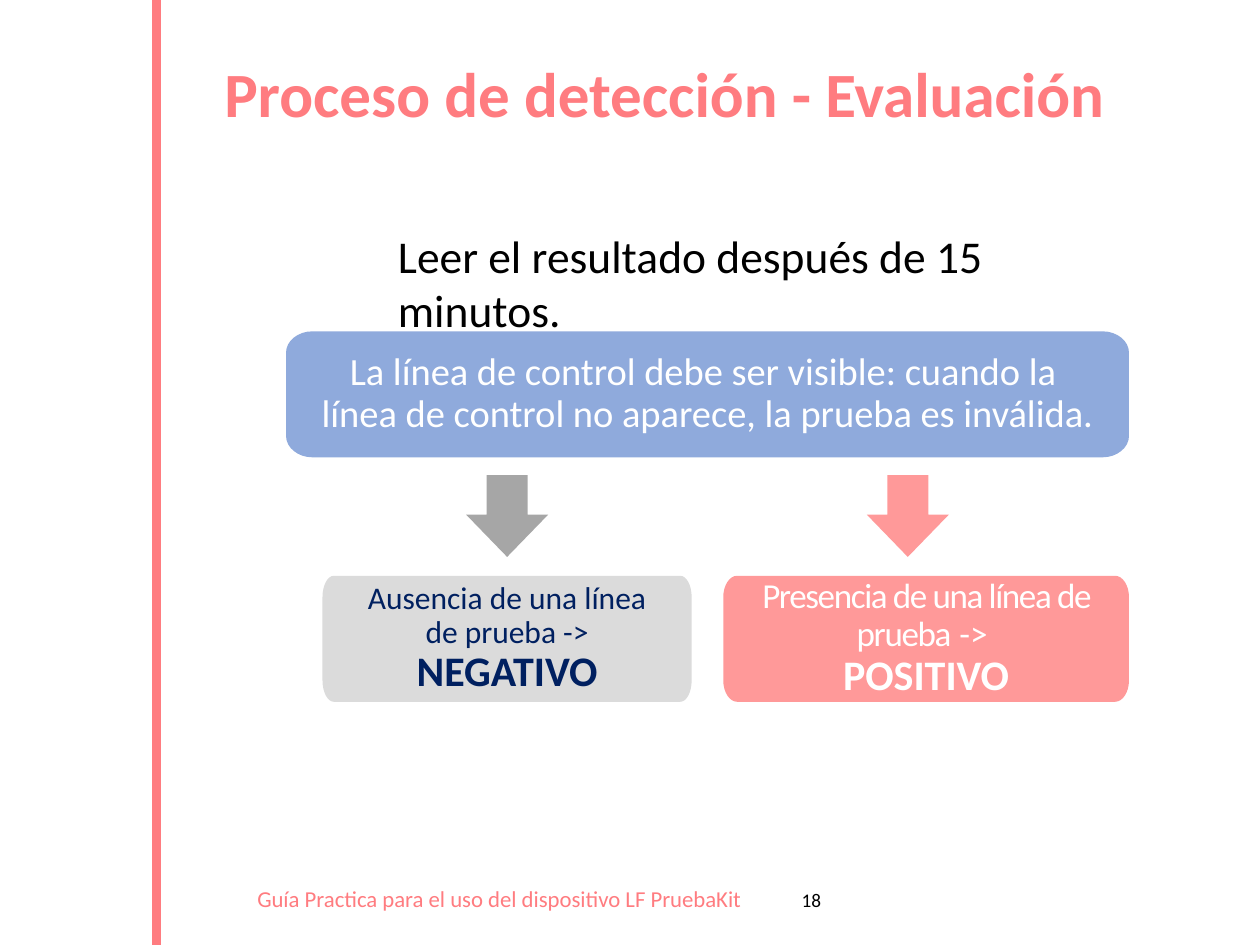
from lxml.etree import SubElement
from pptx import Presentation
from pptx.dml.color import RGBColor
from pptx.enum.shapes import MSO_CONNECTOR, MSO_SHAPE
from pptx.enum.text import MSO_ANCHOR, MSO_AUTO_SIZE, PP_ALIGN
from pptx.oxml.ns import qn
from pptx.util import Inches, Pt

CORAL, PINK, WHITE, NAVY = "FF7C80", "FF9999", "FFFFFF", "002060"
BREAK = "\n"
ROW_BOX, ROW_ARROW, ROW_RESULT = 2.63, 3.77, 4.57
BOX_H, CORNER_H = 1, 0.17
ROUNDNESS = 0.55


def rgb(value):
    return RGBColor.from_string(value)


def style(run, size, color, bold=False, spacing=0):
    """Format a run; spacing is in points."""
    run.font.name = "Calibri"
    run.font.size = Pt(size)
    run.font.bold = bold
    run.font.color.rgb = rgb(color)
    if spacing:
        run.font._element.set("spc", str(round(spacing * 100)))


def paint(s, color):
    s.shadow.inherit = False
    s.fill.solid()
    s.fill.fore_color.rgb = rgb(color)
    s.line.fill.background()


def add_rule(slide, x, height):
    """Draw the full-height vertical rule."""
    line = slide.shapes.add_connector(
        MSO_CONNECTOR.STRAIGHT, Inches(x), height, Inches(x), 0)
    line.line.color.rgb = rgb(CORAL)
    line.line.width = Pt(5)
    SubElement(line._element.spPr, qn("a:effectLst"))


def add_title(slide, text):
    s = slide.shapes.title
    s.left, s.top, s.width, s.height = map(Inches, (1.68, 0.45, 7.63, 0.93))
    tf = s.text_frame
    tf.text = text
    tf.auto_size = MSO_AUTO_SIZE.NONE
    tf.vertical_anchor = MSO_ANCHOR.TOP
    p = tf.paragraphs[0]
    p.alignment = PP_ALIGN.LEFT
    p.line_spacing = 0.9
    style(p.runs[0], 36, CORAL, bold=True)


def add_label(slide, place, text, size, color, align=PP_ALIGN.CENTER):
    tf = slide.shapes.add_textbox(*map(Inches, place)).text_frame
    tf.word_wrap = True
    tf.text = text
    p = tf.paragraphs[0]
    p.alignment = align
    style(p.runs[0], size, color)


def round_corners(s):
    """Turn every second segment of an eight-point outline into a curve."""
    segments = list(s._element.iter(qn("a:lnTo")))
    points = [tuple(int(pt.get(axis)) for axis in "xy")
              for pt in s._element.iter(qn("a:pt"))]
    for i in range(0, 8, 2):
        start, end = points[i], points[i + 1]
        corner = (start[0], end[1]) if i % 4 == 0 else (end[0], start[1])
        curve = segments[i]
        curve.tag = qn("a:cubicBezTo")
        for position, anchor in enumerate((start, end)):
            x, y = (round(a + ROUNDNESS * (c - a)) for a, c in zip(anchor, corner))
            control = SubElement(curve, qn("a:pt"), x=str(x), y=str(y))
            curve.insert(position, control)


def add_rounded_box(slide, left, top, width, corner_w, fill, parts):
    """Draw a box with elliptical corners; parts are breaks or (text, *style)."""
    right, bottom = left + width, top + BOX_H
    x1, x2 = left + corner_w, right - corner_w
    y1, y2 = top + CORNER_H, bottom - CORNER_H
    outline = [(Inches(x), Inches(y)) for x, y in (
        (left, y1), (x1, top), (x2, top), (right, y1),
        (right, y2), (x2, bottom), (x1, bottom), (left, y2))]
    builder = slide.shapes.build_freeform(*outline[0])
    builder.add_line_segments(outline[1:], close=True)
    s = builder.convert_to_shape()
    round_corners(s)
    paint(s, fill)

    tf = s.text_frame
    tf.word_wrap = True
    tf.vertical_anchor = MSO_ANCHOR.MIDDLE
    tf.margin_left = tf.margin_right = Inches(0.21)
    tf.margin_top = tf.margin_bottom = Inches(0.05)
    p = tf.paragraphs[0]
    p.alignment = PP_ALIGN.CENTER
    p.line_spacing = 0.9
    for part in parts:
        if part == BREAK:
            p.add_line_break()
        else:
            text, *look = part
            r = p.add_run()
            r.text = text
            style(r, *look)


def add_down_arrow(slide, left, color):
    s = slide.shapes.add_shape(MSO_SHAPE.DOWN_ARROW, Inches(left), Inches(ROW_ARROW),
                               Inches(0.65), Inches(0.65))
    s.adjustments[0] = 0.5
    s.adjustments[1] = 0.515
    paint(s, color)


def main():
    prs = Presentation()
    prs.slide_width, prs.slide_height = Inches(10), Inches(7.5)
    slide = prs.slides.add_slide(prs.slide_layouts[5])

    add_rule(slide, 1.24, prs.slide_height)
    add_title(slide, "Proceso de detección - Evaluación")
    add_label(slide, (3.06, 1.76, 5.05, 0.54),
              "Leer el resultado después de 15 minutos.", 26, "000000", PP_ALIGN.LEFT)

    add_rounded_box(slide, 2.27, ROW_BOX, 6.69, 0.21, "8FAADC", [
        ("La línea de control debe ser visible: cuando la ", 22, WHITE), BREAK,
        ("línea de control no aparece, la prueba es inválida.", 22, WHITE)])
    add_rounded_box(slide, 2.56, ROW_RESULT, 2.93, 0.09, "DBDBDB", [
        ("Ausencia de una línea de prueba -> ", 18, NAVY),
        ("NEGATIVO", 24, NAVY, True)])
    add_rounded_box(slide, 5.74, ROW_RESULT, 3.22, 0.11, PINK, [
        ("Presencia de una línea de prueba", 20, WHITE, False, -0.8),
        (" -> ", 20, WHITE), BREAK,
        ("POSITIVO", 24, WHITE, True)])

    for left, color in ((3.7, "A6A6A6"), (6.88, PINK)):
        add_down_arrow(slide, left, color)

    add_label(slide, (1.61, 6.97, 4.7, 0.32),
              "Guía Practica para el uso del dispositivo LF PruebaKit", 13, CORAL)
    add_label(slide, (6.22, 7, 0.44, 0.29), "18", 11, "000000")
    prs.save("out.pptx")


if __name__ == "__main__":
    main()
